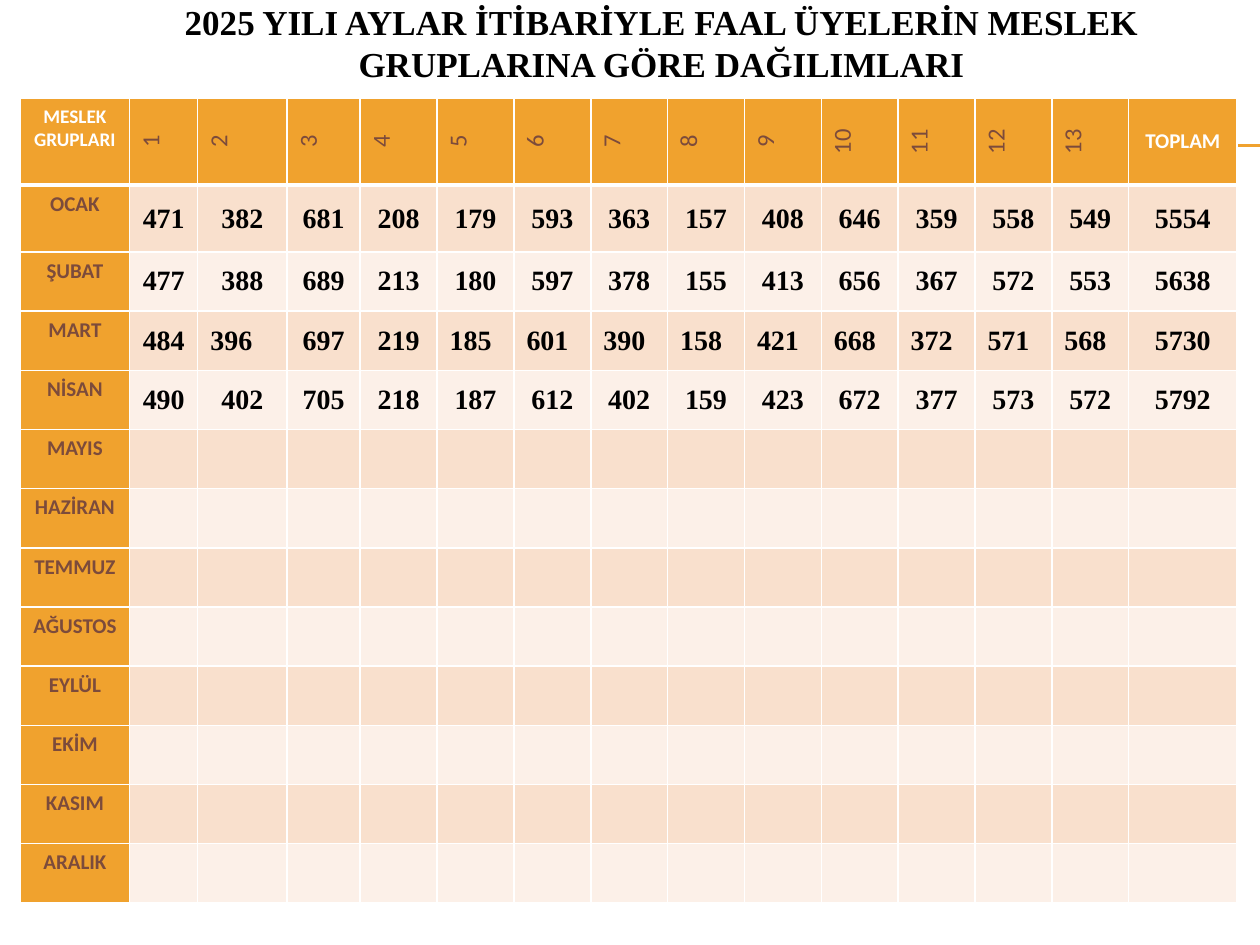
from dataclasses import dataclass

from lxml.etree import SubElement
from pptx import Presentation
from pptx.dml.color import RGBColor as Color
from pptx.enum.shapes import MSO_CONNECTOR as Connector
from pptx.enum.text import MSO_ANCHOR as Anchor, MSO_AUTO_SIZE as AutoSize, PP_ALIGN as Align
from pptx.oxml.ns import qn
from pptx.util import Inches, Pt


@dataclass(frozen=True)
class Theme:
    """Colours, fonts and type sizes of the page."""
    accent: str = "F0A22E"
    brown: str = "7C4B3B"
    white: str = "FFFFFF"
    black: str = "000000"
    bands: tuple = ("F9E0CD", "FCF0E8")
    serif: str = "Times New Roman"
    sans: str = "Calibri"
    title: int = 20
    figure: int = 16
    group: int = 14
    label: int = 12
    corner: int = 11
    rule: float = 0.75
    border: int = 1
    header_border: int = 3


TITLE = "2025 YILI AYLAR İTİBARİYLE FAAL ÜYELERİN MESLEK GRUPLARINA GÖRE DAĞILIMLARI"
MONTHS = ["OCAK", "ŞUBAT", "MART", "NİSAN", "MAYIS", "HAZİRAN",
          "TEMMUZ", "AĞUSTOS", "EYLÜL", "EKİM", "KASIM", "ARALIK"]
MEMBERS = {
    "OCAK": [471, 382, 681, 208, 179, 593, 363, 157, 408, 646, 359, 558, 549, 5554],
    "ŞUBAT": [477, 388, 689, 213, 180, 597, 378, 155, 413, 656, 367, 572, 553, 5638],
    "MART": [484, 396, 697, 219, 185, 601, 390, 158, 421, 668, 372, 571, 568, 5730],
    "NİSAN": [490, 402, 705, 218, 187, 612, 402, 159, 423, 672, 377, 573, 572, 5792],
}
GROUPS = range(1, 14)
TOTAL = len(GROUPS) + 1
LEFT_ALIGNED = {("MART", group) for group in (2, *range(5, 14))}
COLUMN_WIDTHS = [0.87, 0.54, 0.71, 0.58] + [0.61] * 10 + [0.86]
ROW_HEIGHTS = [0.69, 0.53] + [0.47] * 11


class PageBuilder:
    """Holds the theme and the current slide and adds elements to it."""

    def __init__(self, page, theme):
        self.page = page
        self.theme = theme

    def text(self, frame, words, size, color, font, bold=True, align=Align.CENTER):
        """Add one formatted run to the first paragraph of a frame."""
        para = frame.paragraphs[0]
        para.alignment = align
        span = para.add_run()
        span.text = words
        span.font.size = Pt(size)
        span.font.name = font
        span.font.bold = bold
        span.font.color.rgb = Color.from_string(color)

    def title(self, words, left, top, width, height):
        """Place and format the title placeholder."""
        box = self.page.shapes.title
        box.left, box.top = Inches(left), Inches(top)
        box.width, box.height = Inches(width), Inches(height)
        frame = box.text_frame
        frame.auto_size = AutoSize.NONE
        frame.word_wrap = True
        frame.vertical_anchor = Anchor.MIDDLE
        self.text(frame, words, self.theme.title, self.theme.black, self.theme.serif)

    def rule(self, left, right, top):
        """Add a thin horizontal accent line."""
        line = self.page.shapes.add_connector(
            Connector.STRAIGHT, Inches(left), Inches(top), Inches(right), Inches(top))
        line.line.color.rgb = Color.from_string(self.theme.accent)
        line.line.width = Pt(self.theme.rule)
        SubElement(line._element.spPr, qn("a:effectLst"))

    def table(self, left, top, widths, heights):
        """Add an unbanded table with the given column widths and row heights."""
        table = self.page.shapes.add_table(
            len(heights), len(widths), Inches(left), Inches(top),
            Inches(sum(widths)), Inches(sum(heights))).table
        table.first_row = table.horz_banding = False
        for column, width in zip(table.columns, widths):
            column.width = Inches(width)
        for row, height in zip(table.rows, heights):
            row.height = Inches(height)
        return table

    def cell(self, cell, fill, thick_side=None):
        """Give a cell its white borders and its fill."""
        properties = cell._tc.get_or_add_tcPr()
        for side in "LRTB":
            points = self.theme.header_border if side == thick_side else self.theme.border
            edge = SubElement(properties, qn(f"a:ln{side}"), w=str(Pt(points)))
            paint = SubElement(edge, qn("a:solidFill"))
            SubElement(paint, qn("a:srgbClr"), val=self.theme.white)
        cell.fill.solid()
        cell.fill.fore_color.rgb = Color.from_string(fill)

    def header(self, table):
        """Fill the header row with group numbers and the total heading."""
        theme = self.theme
        cells = list(table.rows[0].cells)
        for cell in cells:
            self.cell(cell, theme.accent, "B")
        self.text(cells[0].text_frame, "MESLEK GRUPLARI", theme.corner, theme.white, theme.sans)
        for group in GROUPS:
            cells[group]._tc.get_or_add_tcPr().set("vert", "vert270")
            self.text(cells[group].text_frame, str(group), theme.group, theme.brown,
                      theme.sans, bold=False)
        cells[TOTAL].vertical_anchor = Anchor.MIDDLE
        self.text(cells[TOTAL].text_frame, "TOPLAM", theme.label, theme.white, theme.sans)

    def month(self, table, row, name):
        """Fill one month row with its label and member counts."""
        theme = self.theme
        band = theme.bands[(row - 1) % 2]
        cells = list(table.rows[row].cells)
        for column, cell in enumerate(cells):
            self.cell(cell, band if column else theme.accent, "T" if row == 1 else None)
        self.text(cells[0].text_frame, name, theme.label, theme.brown, theme.sans)
        for column, count in enumerate(MEMBERS.get(name, []), start=1):
            cells[column].vertical_anchor = Anchor.MIDDLE
            align = Align.LEFT if (name, column) in LEFT_ALIGNED else Align.CENTER
            self.text(cells[column].text_frame, str(count), theme.figure, theme.black,
                      theme.serif, align=align)


def main():
    """Build the member distribution page and save the deck."""
    deck = Presentation()
    deck.slide_width, deck.slide_height = Inches(10), Inches(7.5)
    builder = PageBuilder(deck.slides.add_slide(deck.slide_layouts[5]), Theme())
    for top in (1.15, 1.16):
        builder.rule(0.56, 10, top)
    builder.title(TITLE, 0.5, 0, 9.5, 0.67)
    table = builder.table(0.16, 0.78, COLUMN_WIDTHS, ROW_HEIGHTS)
    builder.header(table)
    for row, name in enumerate(MONTHS, start=1):
        builder.month(table, row, name)
    deck.save("out.pptx")


if __name__ == "__main__":
    main()
